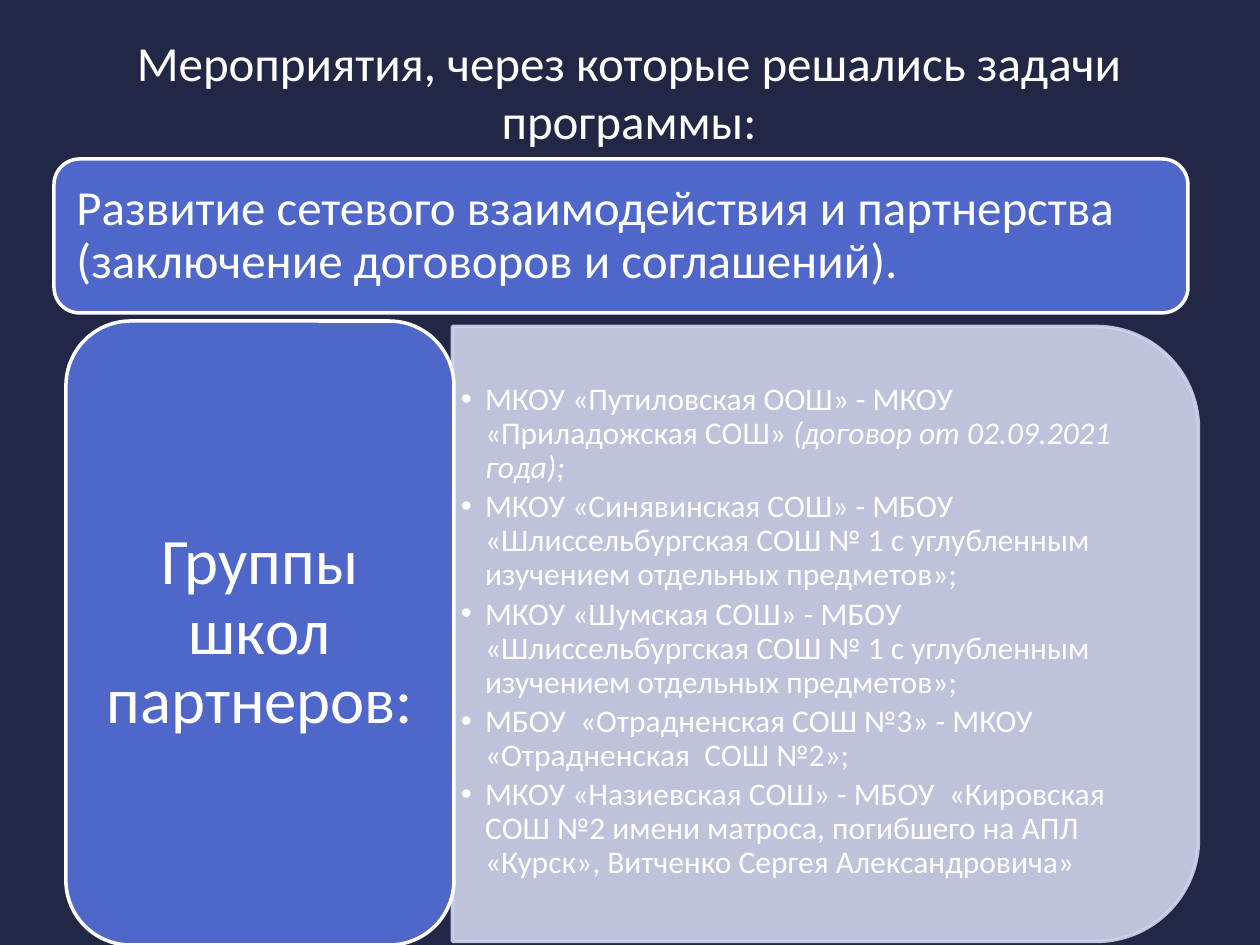
import pptx
import pptx.util
import pptx.dml.color
import pptx.enum.shapes
import pptx.enum.text
from lxml import etree

RGB = pptx.dml.color.RGBColor
SHAPE = pptx.enum.shapes.MSO_SHAPE
ALIGN = pptx.enum.text.PP_ALIGN
ANCHOR = pptx.enum.text.MSO_ANCHOR

# Content: each paragraph is a list of (text, italic) runs
TITLE = [[("Мероприятия, через которые решались задачи программы:", False)]]
GOAL = [[("Развитие сетевого взаимодействия и партнерства (заключение договоров и соглашений).", False)]]
GROUPS = [[("Группы школ партнеров:", False)]]
PARTNERS = [
    [("МКОУ «Путиловская ООШ» - МКОУ «Приладожская СОШ» ", False),
     ("(договор от 02.09.2021 года);", True)],
    [("МКОУ «Синявинская СОШ» - МБОУ «Шлиссельбургская СОШ № 1 с углубленным изучением отдельных предметов»;", False)],
    [("МКОУ «Шумская СОШ» - МБОУ «Шлиссельбургская СОШ № 1 с углубленным изучением отдельных предметов»;", False)],
    [("МБОУ  «Отрадненская СОШ №3» - МКОУ  «Отрадненская  СОШ №2»;", False)],
    [("МКОУ «Назиевская СОШ» - МБОУ  «Кировская СОШ №2 имени матроса, погибшего на АПЛ «Курск», Витченко Сергея Александровича»", False)],
]

# Style
NAVY = RGB(0x21, 0x27, 0x45)
BLUE = RGB(0x4E, 0x67, 0xC8)
LILAC = RGB(0xD0, 0xD3, 0xEB)
WHITE = RGB(0xFF, 0xFF, 0xFF)
FONT = "Calibri"

# Places in px: left, top, width, height
TITLE_BOX = (54, 26, 1150, 131)
GOAL_BOX = (54, 159, 1134, 154)
PANEL_BOX = (518, 261, 615, 746)  # before the quarter turn
LIST_BOX = (452, 355, 716, 554)
GROUPS_BOX = (66, 321, 388, 624)
LIST_INDENT = 24


def px(n):
    return round(n * 914400 / 126)


def place(shape, box):
    shape.left, shape.top, shape.width, shape.height = map(px, box)


def write(shape, paragraphs, size, align=ALIGN.LEFT, anchor=ANCHOR.MIDDLE,
          inset=(13, 6), spacing=0.9, after=0, bullet=None):
    tf = shape.text_frame
    tf.word_wrap = True
    tf.auto_size = pptx.enum.text.MSO_AUTO_SIZE.NONE
    tf.vertical_anchor = anchor
    tf.margin_left = tf.margin_right = px(inset[0])
    tf.margin_top = tf.margin_bottom = px(inset[1])
    for i, runs in enumerate(paragraphs):
        p = tf.add_paragraph() if i else tf.paragraphs[0]
        p.alignment, p.line_spacing = align, spacing
        p.space_before, p.space_after = 0, pptx.util.Pt(after)
        if bullet:
            props = p._p.get_or_add_pPr()
            props.set("marL", str(px(LIST_INDENT)))
            props.set("indent", str(-px(LIST_INDENT)))
            etree.SubElement(props, pptx.oxml.ns.qn("a:buChar")).set("char", bullet)
        for text, italic in runs:
            r = p.add_run()
            r.text = text
            r.font.name, r.font.size = FONT, pptx.util.Pt(size)
            r.font.italic, r.font.color.rgb = italic, WHITE


def add_block(s, kind, box, fill, line, opacity=100):
    sp = s.shapes.add_shape(kind, *map(px, box))
    sp.shadow.inherit = False
    sp.fill.solid()
    sp.fill.fore_color.rgb = fill
    sp.line.color.rgb = line
    sp.line.width = pptx.util.Pt(2)
    if opacity < 100:
        for color in sp._element.spPr.iter(pptx.oxml.ns.qn("a:srgbClr")):
            etree.SubElement(color, pptx.oxml.ns.qn("a:alpha")).set("val", str(opacity * 1000))
    return sp


def main():
    prs = pptx.Presentation()
    prs.slide_width, prs.slide_height = px(1260), px(945)
    s = prs.slides.add_slide(prs.slide_layouts[1])
    s.background.fill.solid()
    s.background.fill.fore_color.rgb = NAVY

    # Title
    title, body = s.placeholders
    place(title, TITLE_BOX)
    write(title, TITLE, 28, align=ALIGN.CENTER, anchor=ANCHOR.TOP, spacing=1.0)

    # Goal bar
    goal = add_block(s, SHAPE.ROUNDED_RECTANGLE, GOAL_BOX, BLUE, WHITE)
    write(goal, GOAL, 28, inset=(15, 15))

    # Partner list on its panel
    panel = add_block(s, SHAPE.ROUND_2_SAME_RECTANGLE, PANEL_BOX, LILAC, LILAC, opacity=90)
    panel.rotation = 90
    place(body, LIST_BOX)
    write(body, PARTNERS, 18, inset=(9, 5), after=3, bullet="•")
    panel._element.addnext(body._element)

    # Group heading
    groups = add_block(s, SHAPE.ROUNDED_RECTANGLE, GROUPS_BOX, BLUE, WHITE)
    write(groups, GROUPS, 37, align=ALIGN.CENTER, inset=(19, 10))

    prs.save("out.pptx")


if __name__ == "__main__":
    main()
